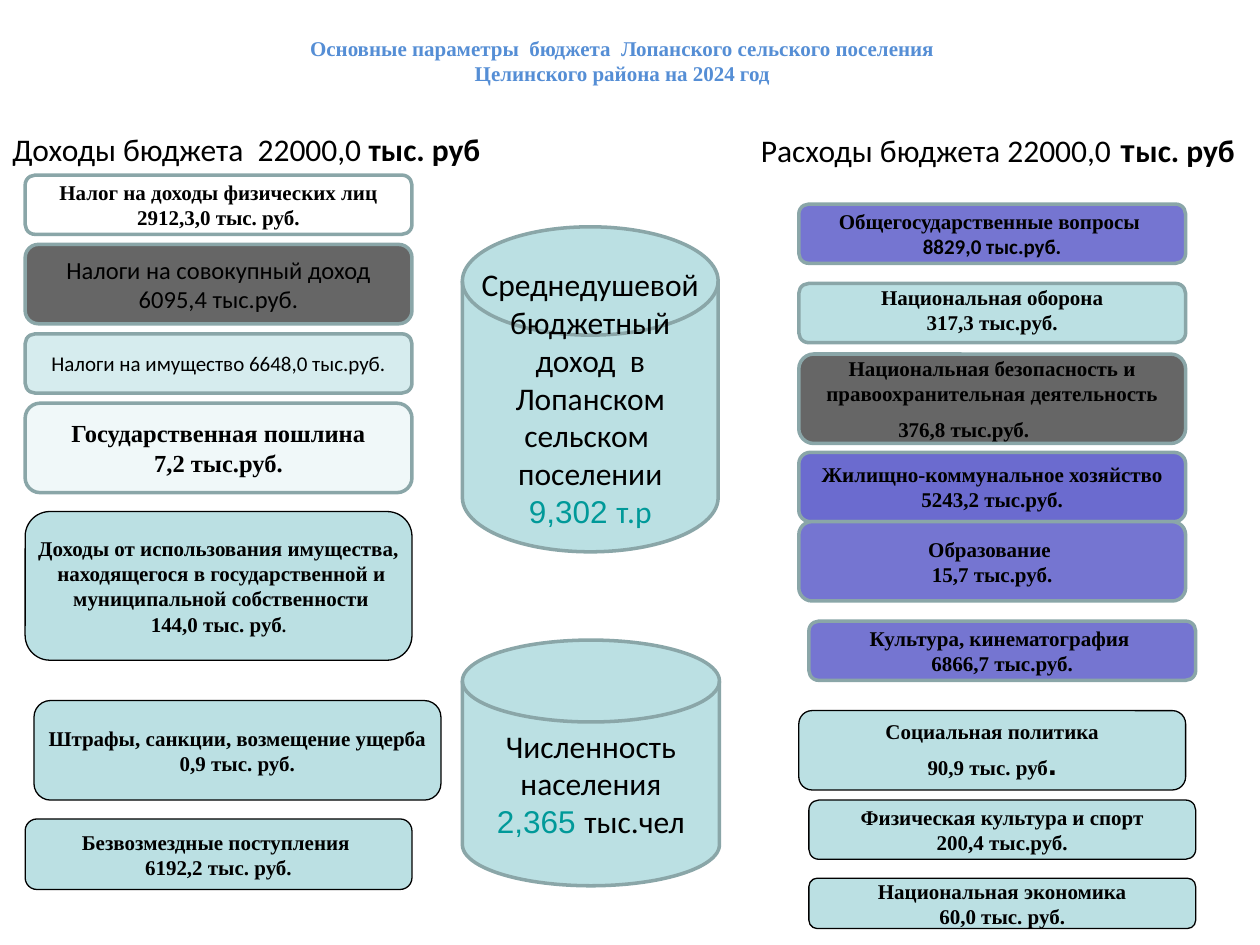
from pptx import Presentation
from pptx import util as u
from pptx.dml.color import RGBColor
from pptx.enum import shapes, text

PX = 9144  # 100 px to the inch
HUE = {
    "title": "558ED5", "ink": "000000", "teal": "009999", "edge": "8AA6A8",
    "white": "FFFFFF", "gray": "666666", "pale": "F0F8F9", "mist": "D6ECEE",
    "aqua": "BBE0E3", "violet": "7575D1", "indigo": "6B6BCF",
}
SERIF, SANS, ARIAL = "Times New Roman", "Calibri", "Arial"
ROUND = shapes.MSO_SHAPE.ROUNDED_RECTANGLE
DISK = shapes.MSO_SHAPE.FLOWCHART_MAGNETIC_DISK
MID, TOP = text.MSO_ANCHOR.MIDDLE, text.MSO_ANCHOR.TOP
CENTER, LEFT = text.PP_ALIGN.CENTER, text.PP_ALIGN.LEFT


def rgb(name):
    return RGBColor.from_string(HUE[name])


def style(font, size, face, bold, hue):
    font.size = u.Pt(size)
    font.name = face
    font.bold = bold
    font.color.rgb = rgb(hue)


class Board:
    def __init__(self, deck):
        self.slide = deck.slides.add_slide(deck.slide_layouts[5])

    def fill_text(self, shape, lines, size=12, face=SERIF, bold=True,
                  hue="ink", align=CENTER, anchor=MID, wrap=True):
        """A line is a string or a list of (text, font changes) runs."""
        frame = shape.text_frame
        frame.word_wrap, frame.vertical_anchor = wrap, anchor
        frame.auto_size = text.MSO_AUTO_SIZE.NONE
        look = dict(size=size, face=face, bold=bold, hue=hue)
        for i, line in enumerate(lines):
            par = frame.paragraphs[0] if i == 0 else frame.add_paragraph()
            par.alignment = align
            style(par.font, **look)
            runs = [(line, {})] if isinstance(line, str) else line
            for words, change in runs:
                run = par.add_run()
                run.text = words
                if len(runs) > 1:
                    style(run.font, **{**look, **change})
        return frame

    def title(self, x, y, w, h, lines):
        shape = self.slide.shapes.title
        shape.left, shape.top, shape.width, shape.height = (
            n * PX for n in (x, y, w, h))
        self.fill_text(shape, lines, hue="title")

    def label(self, x, y, w, h, runs):
        shape = self.slide.shapes.add_textbox(x * PX, y * PX, w * PX, h * PX)
        self.fill_text(shape, [runs], 18, SANS, False, align=LEFT, anchor=TOP)

    def box(self, x, y, w, h, fill, lines, kind=ROUND, thin=False, **look):
        shape = self.slide.shapes.add_shape(
            kind, x * PX, y * PX, w * PX, h * PX)
        shape.shadow.inherit = False
        shape.fill.solid()
        shape.fill.fore_color.rgb = rgb(fill)
        shape.line.color.rgb = rgb("ink" if thin else "edge")
        shape.line.width = u.Pt(0.75 if thin else 2)
        return self.fill_text(shape, lines, wrap=not thin, **look)

    def disk(self, x, y, w, h, lines):
        return self.box(x, y, w, h, "aqua", lines, DISK,
                        size=18, face=SANS, bold=False)


def main():
    deck = Presentation()
    deck.slide_width, deck.slide_height = 1000 * PX, 750 * PX
    board = Board(deck)
    num = dict(face=ARIAL, hue="teal")

    # Headings
    board.title(51, 23, 886, 50, [
        "Основные параметры  бюджета  Лопанского сельского поселения",
        "Целинского района на 2024 год"])
    board.label(0, 98, 492, 40, [
        ("Доходы бюджета  22000,0 ", {}), ("тыс. руб", dict(bold=True))])
    board.label(594, 99, 406, 40, [
        ("Расходы бюджета 22000,0", {}),
        (" т", dict(face=ARIAL, bold=True)), ("ыс. руб", dict(bold=True))])

    # Income: framed boxes
    x, w = 20, 307
    board.box(x, 139, w, 47, "white",
              ["Налог на доходы физических лиц 2912,3,0 тыс. руб."])
    board.box(x, 194, w, 63, "gray",
              ["Налоги на совокупный доход", "6095,4 тыс.руб."],
              size=14, face=SANS, bold=False)
    board.box(x, 265, w, 47, "mist", ["Налоги на имущество 6648,0 тыс.руб."],
              face=SANS, bold=False)
    board.box(x, 320, w, 71, "pale",
              ["Государственная пошлина", "7,2 тыс.руб."], size=14)

    # Income: thin-lined boxes
    board.box(x, 406, w, 118, "aqua", [
        "Доходы от использования имущества,",
        [(" ", dict(face=ARIAL)), ("находящегося в государственной и", {})],
        " муниципальной собственности",
        [("144,0 тыс. руб", {}), (".", dict(size=10))]], thin=True)
    board.box(27, 556, 323, 79, "aqua",
              ["Штрафы, санкции, возмещение ущерба", "0,9 тыс. руб."],
              thin=True)
    board.box(x, 650, w, 56, "aqua",
              ["Безвозмездные поступления ", "6192,2 тыс. руб."], thin=True)

    # Cylinders
    frame = board.disk(367, 180, 203, 258, [
        "Среднедушевой бюджетный доход  в Лопанском", "сельском ",
        "поселении", [("9,302 ", num), ("т.р", dict(hue="teal"))]])
    frame.margin_bottom = 35 * PX
    board.disk(367, 508, 204, 195, [
        "Численность населения", [("2,365 ", num), ("тыс.чел", {})]])

    # Spending: framed boxes
    x = 634
    frame = board.box(x, 162, w, 47, "violet",
                      ["Общегосударственные вопросы ", "8829,0 тыс.руб."])
    frame.paragraphs[1].font.name = SANS
    frame = board.box(x, 225, w, 47, "aqua",
                      ["Национальная оборона", "317,3 тыс.руб."])
    frame.margin_top, frame.margin_bottom = 0, 6 * PX
    frame = board.box(x, 281, w, 71, "gray", [
        "Национальная безопасность и правоохранительная деятельность",
        "376,8 тыс.руб."])
    last = frame.paragraphs[1]
    last.space_before = u.Pt(6)
    last._p.get_or_add_pPr().set("marR", str(45 * PX))
    board.box(x, 359, w, 55, "indigo",
              ["Жилищно-коммунальное хозяйство 5243,2 тыс.руб."])
    board.box(x, 414, w, 63, "violet", ["Образование ", "15,7 тыс.руб."])
    board.box(642, 493, w, 47, "violet",
              ["Культура, кинематография ", "6866,7 тыс.руб."])

    # Spending: thin-lined boxes
    board.box(x, 564, w, 63, "aqua", [
        "Социальная политика",
        [("90,9 тыс. руб", {}), (".", dict(size=18, face=ARIAL))]], thin=True)
    board.box(642, 635, w, 47, "aqua",
              ["Физическая культура и спорт", "200,4 тыс.руб."], thin=True)
    board.box(642, 697, w, 40, "aqua",
              ["Национальная экономика", "60,0 тыс. руб."], thin=True)

    deck.save("out.pptx")


if __name__ == "__main__":
    main()
